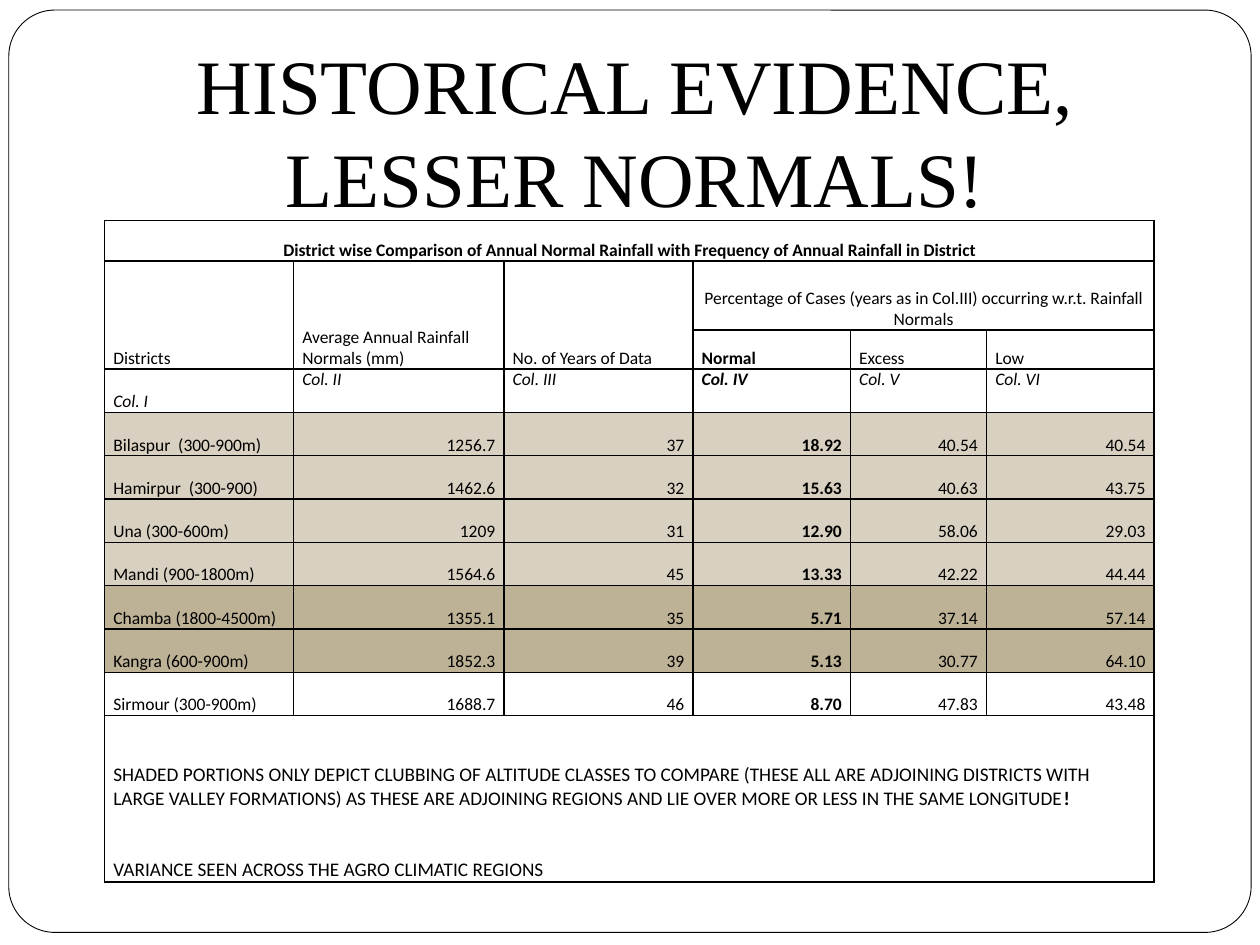
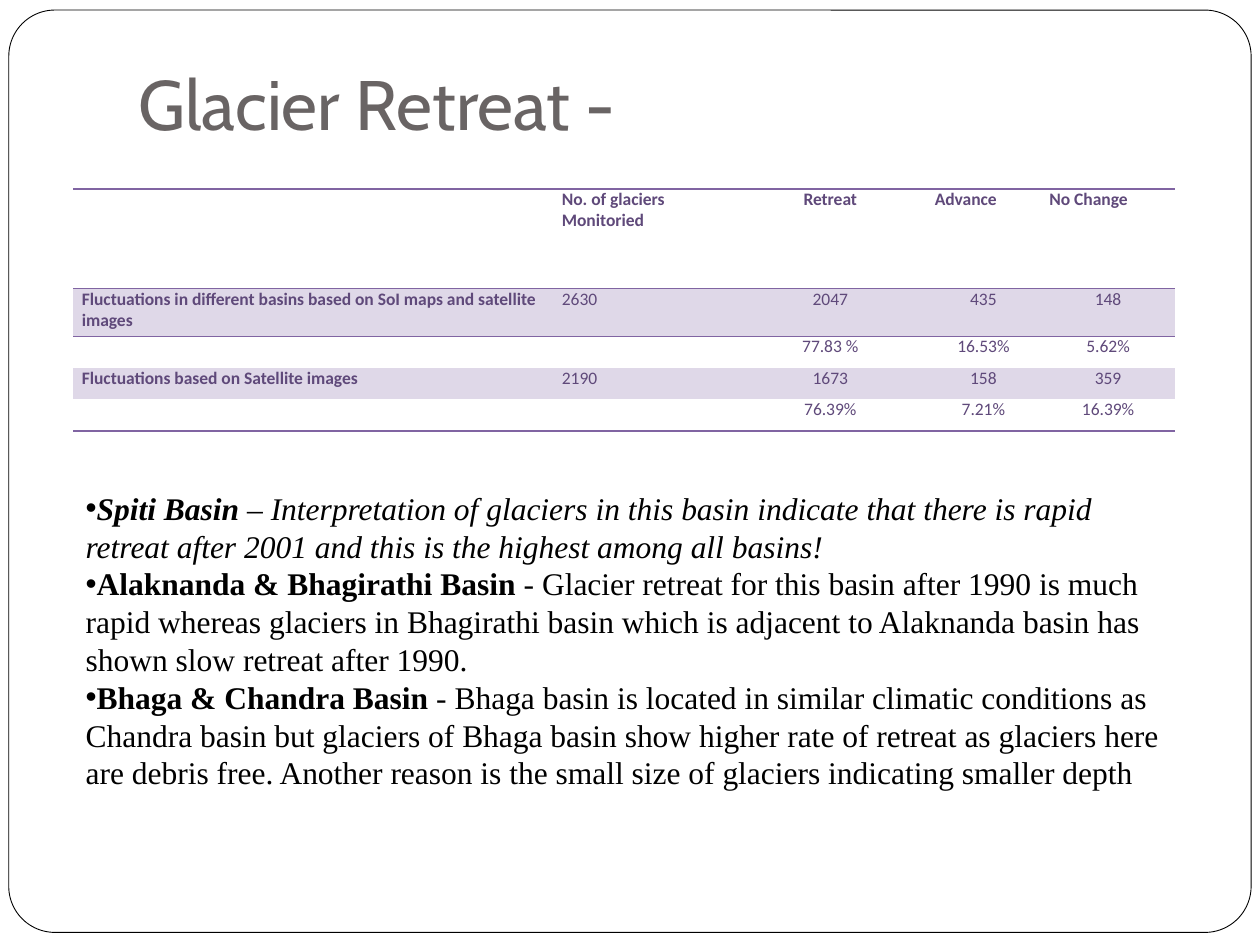
from lxml import etree
from pptx import Presentation
from pptx.dml.color import RGBColor
from pptx.enum.shapes import MSO_SHAPE
from pptx.enum.text import MSO_ANCHOR, MSO_AUTO_SIZE, PP_ALIGN
from pptx.oxml.ns import qn
from pptx.util import Inches, Pt

ROUNDED = MSO_SHAPE.ROUNDED_RECTANGLE
TOP, BOTTOM = MSO_ANCHOR.TOP, MSO_ANCHOR.BOTTOM
LEFT, CENTER, RIGHT = PP_ALIGN.LEFT, PP_ALIGN.CENTER, PP_ALIGN.RIGHT
NO_FIT = MSO_AUTO_SIZE.NONE

COLORS = {
    "black": "000000", "white": "FFFFFF", "title": "696464",
    "low_hills": "D8D0C0", "high_hills": "BDB196",
    "glacier_text": "5F497A", "glacier_rule": "8064A2", "glacier_band": "DFD8E8",
}
SERIF, SANS, HEADING = "Times New Roman", "Calibri", "Cabin"
TITLE_ONLY, TITLE_AND_CONTENT = 5, 1
NO_GRID_STYLE = "{2D5ABB26-0587-4C30-8999-92F81FD0307C}"
NORMAL_COLUMN = 3

DISTRICTS = [
    ("Bilaspur  (300-900m)", "1256.7", "37", "18.92", "40.54", "40.54", "low_hills"),
    ("Hamirpur  (300-900)", "1462.6", "32", "15.63", "40.63", "43.75", "low_hills"),
    ("Una (300-600m)", "1209", "31", "12.90", "58.06", "29.03", "low_hills"),
    ("Mandi (900-1800m)", "1564.6", "45", "13.33", "42.22", "44.44", "low_hills"),
    ("Chamba (1800-4500m)", "1355.1", "35", "5.71", "37.14", "57.14", "high_hills"),
    ("Kangra (600-900m)", "1852.3", "39", "5.13", "30.77", "64.10", "high_hills"),
    ("Sirmour (300-900m)", "1688.7", "46", "8.70", "47.83", "43.48", None),
]
SHADING_NOTE = (
    "SHADED PORTIONS ONLY DEPICT CLUBBING OF ALTITUDE CLASSES TO COMPARE "
    "(THESE ALL ARE ADJOINING DISTRICTS WITH LARGE VALLEY FORMATIONS) AS THESE ARE "
    "ADJOINING REGIONS AND LIE OVER MORE OR LESS IN THE SAME LONGITUDE")
VARIANCE_NOTE = "VARIANCE SEEN ACROSS THE AGRO CLIMATIC REGIONS"

GLACIERS = [
    ("", "No. of glaciers Monitoried", "Retreat", "Advance", "No Change"),
    ("Fluctuations in different basins based on SoI maps and satellite images",
     "2630", "2047", "435", "148"),
    ("", "", "77.83 %", "16.53%", "5.62%"),
    ("Fluctuations based on Satellite images", "2190", "1673", "158", "359"),
    ("", "", "76.39%", "7.21%", "16.39%"),
]
BASINS = [
    ("Spiti Basin ",
     "– Interpretation of glaciers in this basin indicate that there is rapid retreat "
     "after 2001 and this is the highest among all basins!", True),
    ("Alaknanda & Bhagirathi Basin ",
     "- Glacier retreat for this basin after 1990 is much rapid whereas glaciers in "
     "Bhagirathi basin which is adjacent to Alaknanda basin has shown slow retreat "
     "after 1990.", False),
    ("Bhaga & Chandra Basin ",
     "- Bhaga basin is located in similar climatic conditions as Chandra basin but "
     "glaciers of Bhaga basin show higher rate of retreat as glaciers here are debris "
     "free. Another reason is the small size of glaciers indicating smaller depth", False),
]


def rgb(name):
    """Return the named colour."""
    return RGBColor.from_string(COLORS[name])


def write(paragraph, text, size, font, color="black", bold=False, italic=False):
    """Add one formatted run to a paragraph."""
    run = paragraph.add_run()
    run.text = text
    run.font.size = Pt(size)
    run.font.name = font
    run.font.color.rgb = rgb(color)
    run.font.bold = bold
    run.font.italic = italic


def place(part, box):
    """Move a part to a box of left, top, width and height in inches."""
    part.left, part.top, part.width, part.height = (Inches(length) for length in box)


def add_master_frame(prs, slide):
    """Put the rounded page frame on the slide master, behind everything."""
    frame = slide.shapes.add_shape(ROUNDED, 0, 0, 0, 0)
    place(frame, (0.07, 0.08, 9.86, 7.32))
    frame.adjustments[0] = 0.05
    frame.shadow.inherit = False
    frame.fill.solid()
    frame.fill.fore_color.rgb = rgb("white")
    frame.line.color.rgb = rgb("black")
    frame.line.width = Pt(0.5)
    prs.slide_master.shapes._spTree.insert(2, frame._element)


def set_title(slide, box, text, size, font, color, align, anchor):
    """Fill and place the title placeholder."""
    title = slide.shapes.title
    place(title, box)
    frame = title.text_frame
    frame.auto_size = NO_FIT
    frame.word_wrap = True
    frame.vertical_anchor = anchor
    if anchor == BOTTOM:
        frame.margin_bottom = Inches(0.1)
    frame.paragraphs[0].alignment = align
    write(frame.paragraphs[0], text, size, font, color)


def add_plain_table(slide, box, widths, heights):
    """Add a table without style, with the given column and row sizes."""
    left, top, width, height = (Inches(length) for length in box)
    table = slide.shapes.add_table(len(heights), len(widths), left, top, width, height).table
    table.first_row = table.horz_banding = False
    table._tbl.tblPr.find(qn("a:tableStyleId")).text = NO_GRID_STYLE
    for column, column_width in zip(table.columns, widths):
        column.width = Inches(column_width)
    for row, row_height in zip(table.rows, heights):
        row.height = Inches(row_height)
    return table


def format_cell(cell, sides, rule, fill=None, anchor=TOP):
    """Set a cell's margins, anchor, borders and fill."""
    cell.margin_left = cell.margin_right = Inches(0.07)
    cell.margin_top = cell.margin_bottom = 0
    cell.vertical_anchor = anchor
    properties = cell._tc.get_or_add_tcPr()
    for side in sides:
        line = etree.SubElement(properties, qn(f"a:ln{side}"), w=str(Pt(1)))
        solid = etree.SubElement(line, qn("a:solidFill"))
        etree.SubElement(solid, qn("a:srgbClr"), val=COLORS[rule])
    if fill:
        cell.fill.solid()
        cell.fill.fore_color.rgb = rgb(fill)
    else:
        cell.fill.background()


def write_cell(cell, text, color="black", align=LEFT, bold=False, italic=False):
    """Write a cell's only paragraph, or keep an empty one small."""
    paragraph = cell.text_frame.paragraphs[0]
    paragraph.alignment = align
    if text:
        write(paragraph, text, 10, SANS, color, bold, italic)
    else:
        etree.SubElement(paragraph._p, qn("a:endParaRPr"), sz="1000")


def add_rainfall_table(slide, box):
    """Add the district rainfall table with its merged headings and notes."""
    heights = [0.32, 0.55, 0.31] + [2.75 / 8] * 8 + [1.32]
    table = add_plain_table(slide, box, [1.5, 1.67, 1.5, 1.25, 1.08, 1.33], heights)
    last = len(heights) - 1
    fills = {row: district[-1] for row, district in enumerate(DISTRICTS, 4)}
    for row in range(len(heights)):
        for column in range(6):
            anchor = TOP if row == 3 and column else BOTTOM
            format_cell(table.cell(row, column), "LRTB", "black", fills.get(row), anchor)

    for row in (0, last):
        table.cell(row, 0).merge(table.cell(row, 5))
    table.cell(1, 3).merge(table.cell(1, 5))
    write_cell(table.cell(0, 0), "District wise Comparison of Annual Normal Rainfall "
               "with Frequency of Annual Rainfall in District", align=CENTER, bold=True)
    write_cell(table.cell(1, 3), "Percentage of Cases (years as in Col.III) occurring "
               "w.r.t. Rainfall Normals", align=CENTER)
    for column, heading in enumerate(
            ("Districts", "Average Annual Rainfall Normals (mm)", "No. of Years of Data")):
        table.cell(1, column).merge(table.cell(2, column))
        write_cell(table.cell(1, column), heading)
    for column, heading in enumerate(("Normal", "Excess", "Low"), NORMAL_COLUMN):
        write_cell(table.cell(2, column), heading, bold=column == NORMAL_COLUMN)
    for column, numeral in enumerate(("I", "II", "III", "IV", "V", "VI")):
        write_cell(table.cell(3, column), f"Col. {numeral}",
                   bold=column == NORMAL_COLUMN, italic=True)
    for row, district in enumerate(DISTRICTS, 4):
        for column, value in enumerate(district[:-1]):
            write_cell(table.cell(row, column), value, align=RIGHT if column else LEFT,
                       bold=column == NORMAL_COLUMN)

    notes = table.cell(last, 0).text_frame
    write(notes.paragraphs[0], SHADING_NOTE, 11, SANS)
    write(notes.paragraphs[0], "!", 11, SANS, bold=True)
    variance = notes.add_paragraph()
    variance.space_before = Pt(27)
    write(variance, VARIANCE_NOTE, 11, SANS)


def add_glacier_table(slide, box):
    """Add the glacier fluctuation table with banded rows and horizontal rules."""
    table = add_plain_table(slide, box, [3.81, 1.44, 1.52, 0.91, 1.07],
                            [0.79, 0.38, 0.25, 0.25, 0.25])
    rules = ["TB", "T", "", "", "B"]
    for row, values in enumerate(GLACIERS):
        for column, value in enumerate(values):
            cell = table.cell(row, column)
            format_cell(cell, rules[row], "glacier_rule", "glacier_band" if row % 2 else None)
            centered = column == 2 or (row and column > 2)
            write_cell(cell, value, "glacier_text", CENTER if centered else LEFT,
                       bold=row == 0 or column == 0)


def add_basin_list(slide, box):
    """Fill the body placeholder with the bulleted basin findings."""
    body = slide.placeholders[1]
    place(body, box)
    frame = body.text_frame
    frame.auto_size = NO_FIT
    frame.word_wrap = True
    for index, (basin, finding, italic) in enumerate(BASINS):
        paragraph = frame.add_paragraph() if index else frame.paragraphs[0]
        paragraph.space_before = Pt(0)
        properties = paragraph._p.get_or_add_pPr()
        properties.set("marL", "0")
        properties.set("indent", "0")
        etree.SubElement(properties, qn("a:buChar"), char="•")
        write(paragraph, basin, 18, SERIF, bold=True, italic=italic)
        write(paragraph, finding, 18, SERIF, italic=italic)


def build_rainfall_slide(slide):
    """Build the slide on historical rainfall normals."""
    set_title(slide, (0.92, 0.25, 8.25, 1.58), "HISTORICAL EVIDENCE, LESSER NORMALS!",
              44, SERIF, "black", CENTER, TOP)
    add_rainfall_table(slide, (0.83, 1.75, 8.33, 5.25))


def build_glacier_slide(slide):
    """Build the slide on glacier retreat."""
    set_title(slide, (1, 0.3, 8.5, 0.95), "Glacier Retreat -",
              40, HEADING, "title", LEFT, BOTTOM)
    add_glacier_table(slide, (0.58, 1.5, 8.75, 1.92))
    add_basin_list(slide, (0.58, 3.83, 8.83, 2.52))


def main():
    """Build and save the presentation."""
    prs = Presentation()
    prs.slide_width, prs.slide_height = Inches(10), Inches(7.5)
    rainfall = prs.slides.add_slide(prs.slide_layouts[TITLE_ONLY])
    add_master_frame(prs, rainfall)
    build_rainfall_slide(rainfall)
    build_glacier_slide(prs.slides.add_slide(prs.slide_layouts[TITLE_AND_CONTENT]))
    prs.save("out.pptx")


if __name__ == "__main__":
    main()
